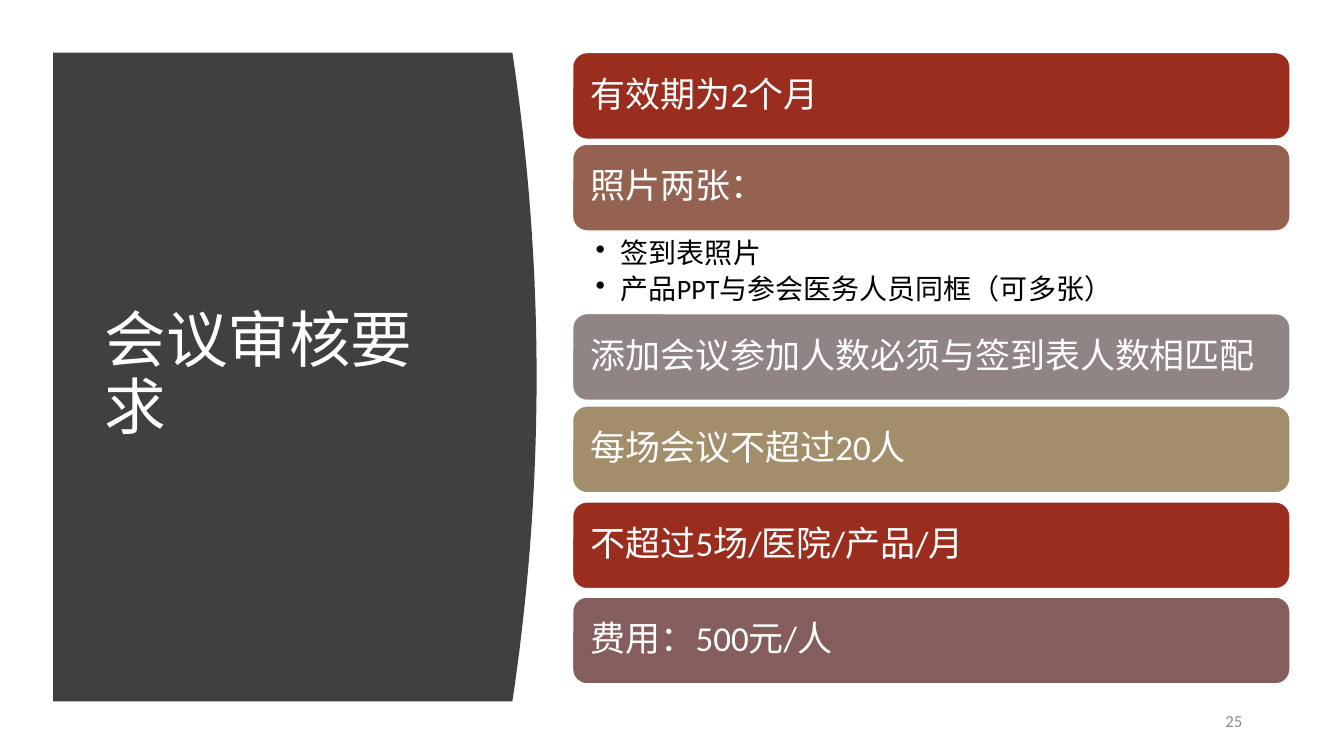
from dataclasses import dataclass

from lxml.etree import SubElement
from pptx import Presentation
from pptx.dml.color import RGBColor as RGB
from pptx.enum.shapes import MSO_SHAPE as SHAPE
from pptx.enum.text import MSO_ANCHOR as ANCHOR, MSO_AUTO_SIZE as AUTO, PP_ALIGN as ALIGN
from pptx.oxml.ns import qn
from pptx.util import Pt


@dataclass(frozen=True)
class Theme:
    font: str = "Calibri"
    white: str = "FFFFFF"
    black: str = "000000"
    panel: str = "404040"
    muted: str = "8C8C8C"
    red: str = "9B2D1F"
    brown: str = "956251"
    grey: str = "918485"
    sand: str = "A28E6A"
    plum: str = "855D5D"
    title_size: int = 44
    card_size: int = 25
    bullet_size: int = 20
    number_size: int = 12


class SlideBuilder:
    """Draws themed elements on one slide, with lengths in points."""

    def __init__(self, prs, theme):
        self.theme = theme
        self.slide = prs.slides.add_slide(prs.slide_layouts[5])
        self.shapes = self.slide.shapes

    def frame(self, sp, anchor, insets):
        tf = sp.text_frame
        tf.word_wrap = True
        tf.auto_size = AUTO.NONE
        tf.vertical_anchor = anchor
        tf.margin_left, tf.margin_top, tf.margin_right, tf.margin_bottom = map(Pt, insets)
        return tf

    def add_text(self, p, text, size, color, align=ALIGN.LEFT, spacing=0.9):
        p.alignment = align
        p.line_spacing = spacing
        r = p.add_run()
        r.text = text
        r.font.name = self.theme.font
        r.font.size = Pt(size)
        r.font.color.rgb = RGB.from_string(color)

    def paint(self, sp, fill, line=None):
        sp.shadow.inherit = False
        sp.fill.solid()
        sp.fill.fore_color.rgb = RGB.from_string(fill)
        if line:
            sp.line.color.rgb = RGB.from_string(line)
            sp.line.width = Pt(1)
        else:
            sp.line.fill.background()

    def panel(self, left, top, right, bottom, bulge, steps=40):
        fb = self.shapes.build_freeform(Pt(left), Pt(top))
        edge = []
        for i in range(steps + 1):
            t = i / steps
            edge.append((Pt(right + bulge * 4 * t * (1 - t)), Pt(top + (bottom - top) * t)))
        fb.add_line_segments(edge + [(Pt(left), Pt(bottom))], close=True)
        self.paint(fb.convert_to_shape(), self.theme.panel)

    def title(self, text, left, top, width, height):
        sp = self.shapes.title
        sp.left, sp.top, sp.width, sp.height = map(Pt, (left, top, width, height))
        tf = self.frame(sp, ANCHOR.MIDDLE, (7.2, 3.6, 7.2, 3.6))
        self.add_text(tf.paragraphs[0], text, self.theme.title_size, self.theme.white)
        tree = sp.element.getparent()
        tree.append(sp.element)

    def card(self, text, fill, left, top, width, height):
        sp = self.shapes.add_shape(SHAPE.ROUNDED_RECTANGLE, *map(Pt, (left, top, width, height)))
        self.paint(sp, fill, self.theme.white)
        tf = self.frame(sp, ANCHOR.MIDDLE, (10, 10, 10, 10))
        self.add_text(tf.paragraphs[0], text, self.theme.card_size, self.theme.white)

    def bullets(self, items, left, top, width, height):
        sp = self.shapes.add_textbox(*map(Pt, (left, top, width, height)))
        tf = self.frame(sp, ANCHOR.TOP, (16.5, 2, 13.5, 2))
        for i, item in enumerate(items):
            p = tf.add_paragraph() if i else tf.paragraphs[0]
            pPr = p._p.get_or_add_pPr()
            pPr.set("marL", str(Pt(18)))
            pPr.set("indent", str(-Pt(18)))
            SubElement(pPr, qn("a:buChar")).set("char", "•")
            p.space_after = Pt(4)
            self.add_text(p, item, self.theme.bullet_size, self.theme.black)

    def number(self, text, left, top, width, height):
        sp = self.shapes.add_textbox(*map(Pt, (left, top, width, height)))
        tf = self.frame(sp, ANCHOR.MIDDLE, (7.2, 3.6, 7.2, 3.6))
        self.add_text(tf.paragraphs[0], text, self.theme.number_size, self.theme.muted, ALIGN.RIGHT, 1.0)


def main():
    prs = Presentation()
    prs.slide_width, prs.slide_height = Pt(960), Pt(540)
    theme = Theme()
    s = SlideBuilder(prs, theme)

    s.panel(38, 37.5, 366, 501, bulge=17.3)
    s.title("会议审核要求", 67.5, 80, 269.5, 377)
    s.number("25", 844.5, 500.5, 50, 29)

    left, width, height = 409, 512.5, 62
    cards = [
        ("有效期为2个月", theme.red, 37.5),
        ("照片两张：", theme.brown, 103),
        ("添加会议参加人数必须与签到表人数相匹配", theme.grey, 224),
        ("每场会议不超过20人", theme.sand, 290),
        ("不超过5场/医院/产品/月", theme.red, 358.5),
        ("费用：500元/人", theme.plum, 426.5),
    ]
    for text, fill, top in cards:
        s.card(text, fill, left, top, width, height)
    s.bullets(["签到表照片", "产品PPT与参会医务人员同框（可多张）"], left, 169, width, 57)

    prs.save("out.pptx")


if __name__ == "__main__":
    main()
